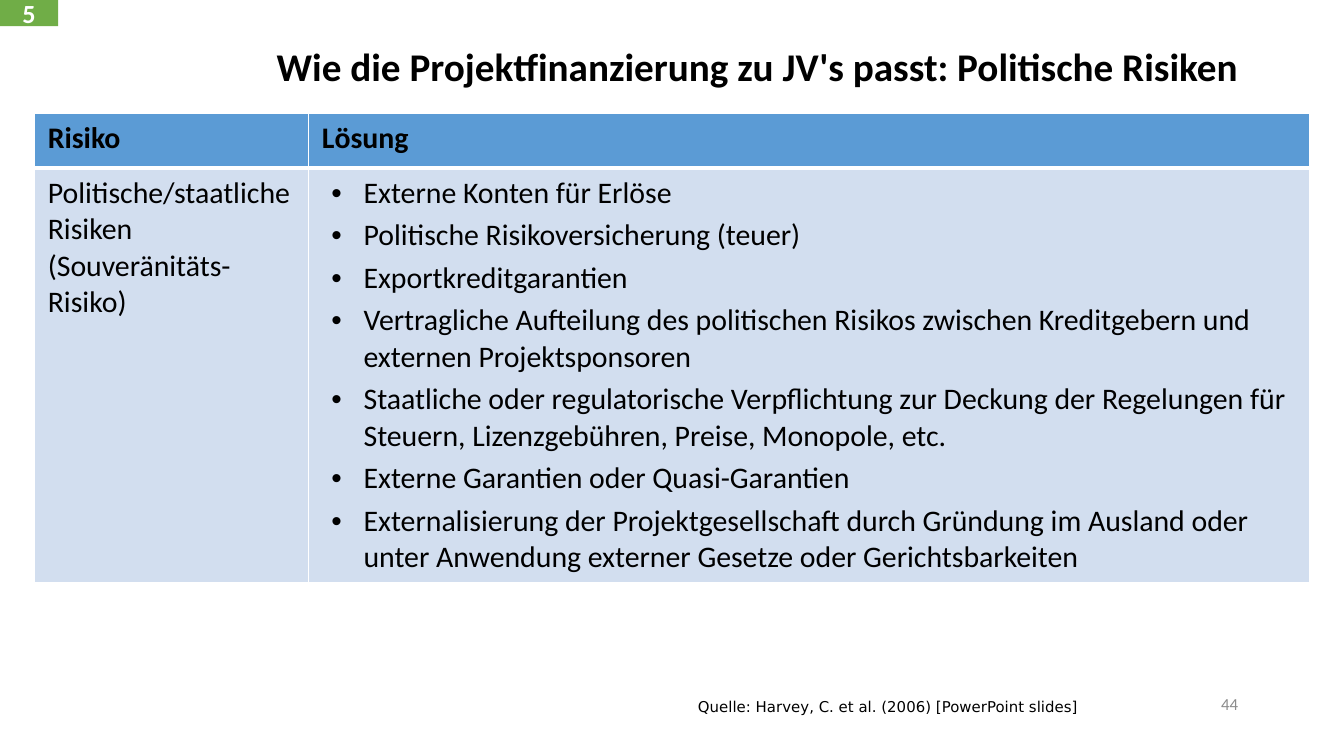
from pptx import Presentation
from pptx.dml.color import RGBColor
from pptx.enum.shapes import MSO_SHAPE as Shape
from pptx.enum.text import MSO_ANCHOR as Anchor, PP_ALIGN as Align
from pptx.oxml import parse_xml
from pptx.oxml.ns import nsdecls
from pptx.util import Inches, Pt

BLACK = RGBColor(0x00, 0x00, 0x00)
WHITE = RGBColor(0xFF, 0xFF, 0xFF)
GRAY = RGBColor(0x8C, 0x8C, 0x8C)
GREEN = RGBColor(0x70, 0xAD, 0x47)
BLUE = RGBColor(0x5B, 0x9B, 0xD5)
PALE_BLUE = RGBColor(0xD2, 0xDE, 0xEF)

TITLE = "Wie die Projektfinanzierung zu JV's passt: Politische Risiken"
CHAPTER = "5"
SOURCE = "Quelle: Harvey, C. et al. (2006) [PowerPoint slides]"
PAGE = "44"
HEADINGS = ["Risiko", "Lösung"]
RISK = "Politische/staatliche Risiken (Souveränitäts-Risiko)"
SOLUTIONS = [
    "Externe Konten für Erlöse",
    "Politische Risikoversicherung (teuer)",
    "Exportkreditgarantien",
    "Vertragliche Aufteilung des politischen Risikos zwischen Kreditgebern und externen Projektsponsoren",
    "Staatliche oder regulatorische Verpflichtung zur Deckung der Regelungen für Steuern, "
    "Lizenzgebühren, Preise, Monopole, etc.",
    "Externe Garantien oder Quasi-Garantien",
    "Externalisierung der Projektgesellschaft durch Gründung im Ausland oder unter Anwendung "
    "externer Gesetze oder Gerichtsbarkeiten",
]

WIDTH = Inches(10)
HEIGHT = WIDTH * 9 // 16
GRID_COLUMNS = 100
TITLE_AREA = (6.9, 2.95, 86.25, 4.3)
TABLE_AREA = (2.56, 8.4, 94.9, 34.9)
SOURCE_AREA = (50.95, 51.4, 32.3, 2.4)
PAGE_AREA = (70.6, 50.9, 22.5, 3)
CHAPTER_AREA = (0, 0, 4.33, 1.94)
TABLE_COLUMNS = (20.4, 74.5)
TABLE_ROWS = (4.1, 30.8)

TITLE_FONT = {"name": "Calibri", "size": Pt(21), "bold": True}
HEADING_FONT = {"name": "Calibri", "size": Pt(16), "bold": True}
BODY_FONT = {"name": "Calibri", "size": Pt(16), "bold": False}
SOURCE_FONT = {"name": "DejaVu Sans", "size": Pt(8)}
PAGE_FONT = {"name": "Calibri", "size": Pt(9)}
CHAPTER_FONT = {"name": "Calibri", "size": Pt(14), "bold": True}


def grid(*cells):
    return [round(WIDTH * cell / GRID_COLUMNS) for cell in cells]


def write(frame, lines, font, color=BLACK, align=Align.LEFT, bulleted=False):
    for index, line in enumerate(lines):
        paragraph = frame.paragraphs[0] if index == 0 else frame.add_paragraph()
        paragraph.alignment = align
        if index:
            paragraph.space_before = Pt(3.2)
        if bulleted:
            properties = paragraph._p.get_or_add_pPr()
            properties.set("marL", str(Inches(0.31)))
            properties.set("indent", str(Inches(-0.24)))
            properties.append(parse_xml(f'<a:buFont {nsdecls("a")} typeface="Arial"/>'))
            properties.append(parse_xml(f'<a:buChar {nsdecls("a")} char="•"/>'))
        run = paragraph.add_run()
        run.text = line
        for key, value in font.items():
            setattr(run.font, key, value)
        run.font.color.rgb = color


def style_cell(cell, fill, top, bottom):
    cell.fill.solid()
    cell.fill.fore_color.rgb = fill
    borders = {"lnL": 1, "lnR": 1, "lnT": top, "lnB": bottom}
    for position, (side, points) in enumerate(borders.items()):
        border = parse_xml(
            f'<a:{side} {nsdecls("a")} w="{Pt(points)}"><a:solidFill>'
            f'<a:srgbClr val="{WHITE}"/></a:solidFill></a:{side}>')
        cell._tc.get_or_add_tcPr().insert(position, border)


def add_risk_table(slide):
    table = slide.shapes.add_table(2, 2, *grid(*TABLE_AREA)).table
    for column, width in zip(table.columns, grid(*TABLE_COLUMNS)):
        column.width = width
    for row, height in zip(table.rows, grid(*TABLE_ROWS)):
        row.height = height
    for index, (heading, body) in enumerate(zip(HEADINGS, ([RISK], SOLUTIONS))):
        heading_cell, body_cell = table.cell(0, index), table.cell(1, index)
        style_cell(heading_cell, BLUE, 1, 3)
        style_cell(body_cell, PALE_BLUE, 3, 1)
        write(heading_cell.text_frame, [heading], HEADING_FONT)
        write(body_cell.text_frame, body, BODY_FONT, bulleted=body is SOLUTIONS)


def add_label(slide, area, text, font, color, align, anchor):
    frame = slide.shapes.add_textbox(*grid(*area)).text_frame
    frame.word_wrap = True
    frame.vertical_anchor = anchor
    write(frame, [text], font, color, align)


def add_title(slide):
    title = slide.shapes.title
    title.left, title.top, title.width, title.height = grid(*TITLE_AREA)
    title.text_frame.vertical_anchor = Anchor.MIDDLE
    write(title.text_frame, [TITLE], TITLE_FONT, align=Align.RIGHT)
    title.text_frame.paragraphs[0].line_spacing = 0.9


def add_chapter(slide):
    chapter = slide.shapes.add_shape(Shape.RECTANGLE, *grid(*CHAPTER_AREA))
    chapter.shadow.inherit = False
    chapter.fill.solid()
    chapter.fill.fore_color.rgb = GREEN
    chapter.line.fill.background()
    chapter.text_frame.vertical_anchor = Anchor.MIDDLE
    write(chapter.text_frame, [CHAPTER], CHAPTER_FONT, WHITE, Align.CENTER)


def main():
    """Build the slide on political risks in project finance."""
    deck = Presentation()
    deck.slide_width, deck.slide_height = WIDTH, HEIGHT
    slide = deck.slides.add_slide(deck.slide_layouts[5])
    add_title(slide)
    add_risk_table(slide)
    add_label(slide, SOURCE_AREA, SOURCE, SOURCE_FONT, BLACK, Align.LEFT, Anchor.TOP)
    add_label(slide, PAGE_AREA, PAGE, PAGE_FONT, GRAY, Align.RIGHT, Anchor.MIDDLE)
    add_chapter(slide)
    deck.save("out.pptx")


if __name__ == "__main__":
    main()
